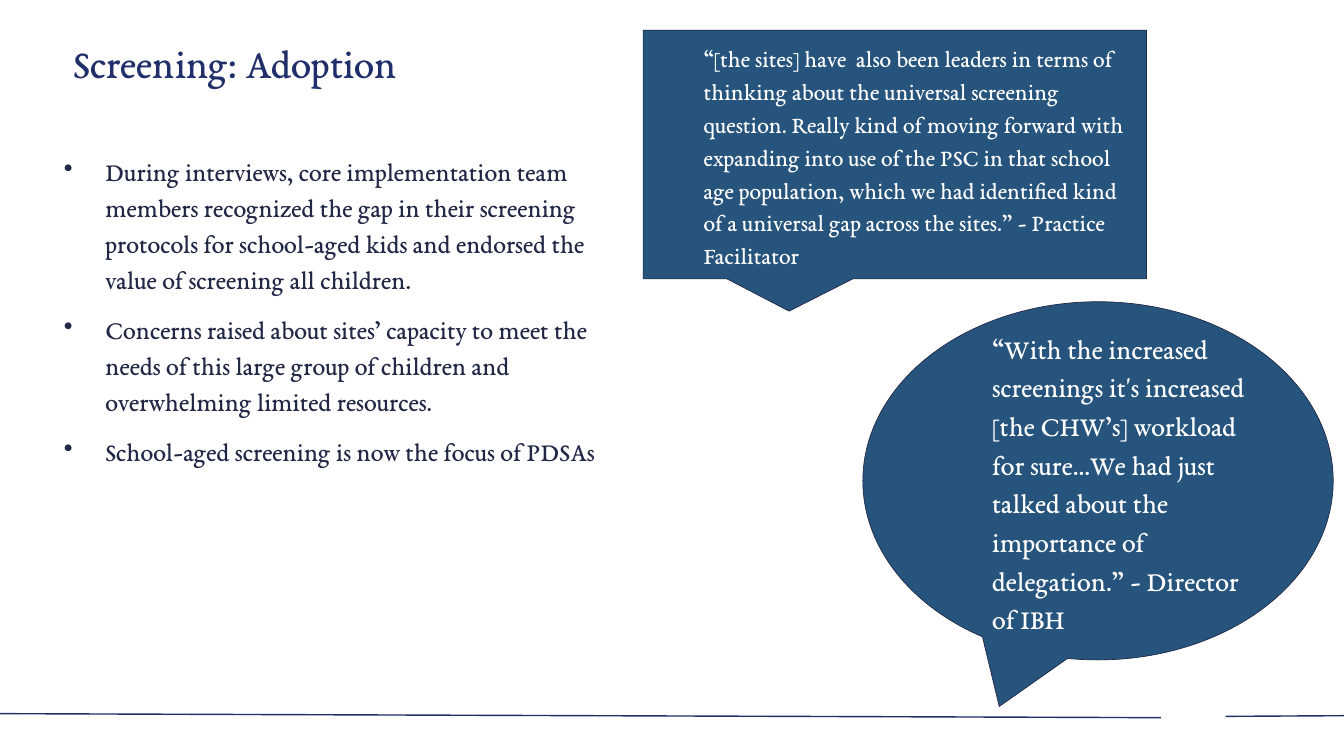
"""Builds the slide on screening adoption with two quotes in callouts."""
from lxml import etree
from pptx import Presentation
from pptx import util as u
from pptx.dml.color import RGBColor
from pptx.enum import shapes, text
from pptx.oxml.ns import qn

WIDTH, HEIGHT = u.Inches(20), u.Inches(11.25)
FONT = "EB Garamond"
NAVY, INK, BLUE, WHITE = "202F6A", "212745", "26547C", "FFFFFF"
INDENT, HANGING = u.Inches(0.75), u.Inches(-0.62)

POINTS = [
    "During interviews, core implementation team members recognized the gap in their "
    "screening protocols for school-aged kids and endorsed the value of screening all children.",
    "Concerns raised about sites’ capacity to meet the needs of this large group of children "
    "and overwhelming limited resources.",
    "School-aged screening is now the focus of PDSAs",
]
DIRECTOR_QUOTE = (
    "“With the increased screenings it's increased [the CHW’s] workload for sure…We had just "
    "talked about the importance of delegation.” - Director of IBH"
)
FACILITATOR_QUOTE = (
    "“[the sites] have  also been leaders in terms of thinking about the universal screening "
    "question. Really kind of moving forward with expanding into use of the PSC in that school "
    "age population, which we had identified kind of a universal gap across the sites.” "
    "- Practice Facilitator"
)


def color(value):
    """Turn a hex string into a colour."""
    return RGBColor.from_string(value)


def place(*shares):
    """Turn alternating percentages of slide width and height into lengths."""
    return [int(share / 100 * (HEIGHT if index % 2 else WIDTH))
            for index, share in enumerate(shares)]


def write(shape, lines, size, ink, spacing, margins, anchor=text.MSO_ANCHOR.TOP):
    """Fill a shape with formatted paragraphs and return them."""
    frame = shape.text_frame
    frame.text = "\n".join(lines)
    frame.word_wrap = True
    frame.vertical_anchor = anchor
    frame.margin_left = frame.margin_right = u.Inches(margins[0])
    frame.margin_top = frame.margin_bottom = u.Inches(margins[1])
    for paragraph in frame.paragraphs:
        paragraph.alignment = text.PP_ALIGN.LEFT
        paragraph.line_spacing = spacing
        for run in paragraph.runs:
            run.font.name = FONT
            run.font.size = u.Pt(size)
            run.font.color.rgb = color(ink)
    return frame.paragraphs


def indent(paragraph, first_line=0):
    """Set the left margin and first-line indent of a paragraph."""
    properties = paragraph._p.get_or_add_pPr()
    properties.set("marL", str(INDENT))
    properties.set("indent", str(first_line))
    return properties


def add_bullet(paragraph):
    """Give a paragraph a hanging round bullet."""
    properties = indent(paragraph, HANGING)
    bullet_color = etree.SubElement(properties, qn("a:buClr"))
    etree.SubElement(bullet_color, qn("a:srgbClr")).set("val", INK)
    etree.SubElement(properties, qn("a:buChar")).set("char", "•")


def add_rule(slide, *ends):
    """Draw one part of the footer rule."""
    rule = slide.shapes.add_connector(shapes.MSO_CONNECTOR.STRAIGHT, *place(*ends))
    rule.line.color.rgb = color(NAVY)
    rule.line.width = u.Pt(1.5)
    etree.SubElement(rule._element.spPr, qn("a:effectLst"))


def add_footer(slide):
    """Draw the two parts of the footer rule."""
    add_rule(slide, 86.4, 94.93, 0, 94.4)
    add_rule(slide, 100, 94.67, 91.2, 94.76)


def add_title(slide, title):
    """Add the slide title."""
    box = slide.shapes.add_textbox(*place(4.7, -0.98, 86.25, 19.29))
    write(box, [title], 44, NAVY, 0.9, (0.15, 0.07), text.MSO_ANCHOR.MIDDLE)


def add_points(slide, points):
    """Add the bulleted findings."""
    box = slide.shapes.add_textbox(*place(3.35, 19.29, 42.7, 74.4))
    for paragraph in write(box, points, 28, INK, 1.15, (0.15, 0.07)):
        paragraph.space_before = u.Pt(15)
        add_bullet(paragraph)


def add_quote(slide, kind, area, adjustments, quote, size):
    """Add a quote in a callout."""
    callout = slide.shapes.add_shape(kind, *place(*area))
    for index, value in enumerate(adjustments):
        callout.adjustments[index] = value
    callout.shadow.inherit = False
    callout.fill.solid()
    callout.fill.fore_color.rgb = color(BLUE)
    callout.line.color.rgb = color(INK)
    callout.line.width = u.Pt(0.75)
    paragraphs = write(callout, [quote], size, WHITE, 1.15, (0.15, 0.15), text.MSO_ANCHOR.MIDDLE)
    indent(paragraphs[0])


def main():
    """Build and save the presentation."""
    presentation = Presentation()
    presentation.slide_width, presentation.slide_height = WIDTH, HEIGHT
    slide = presentation.slides.add_slide(presentation.slide_layouts[6])
    slide.background.fill.solid()
    slide.background.fill.fore_color.rgb = color(WHITE)
    add_footer(slide)
    add_title(slide, "Screening: Adoption")
    add_points(slide, POINTS)
    add_quote(slide, shapes.MSO_SHAPE.OVAL_CALLOUT, (64.2, 39.91, 35, 47.38),
              (-0.21, 0.63), DIRECTOR_QUOTE, 30)
    add_quote(slide, shapes.MSO_SHAPE.ROUNDED_RECTANGULAR_CALLOUT, (47.85, 4, 37.45, 32.89),
              (-0.21, 0.63, 0), FACILITATOR_QUOTE, 25.5)
    presentation.save("out.pptx")


if __name__ == "__main__":
    main()
